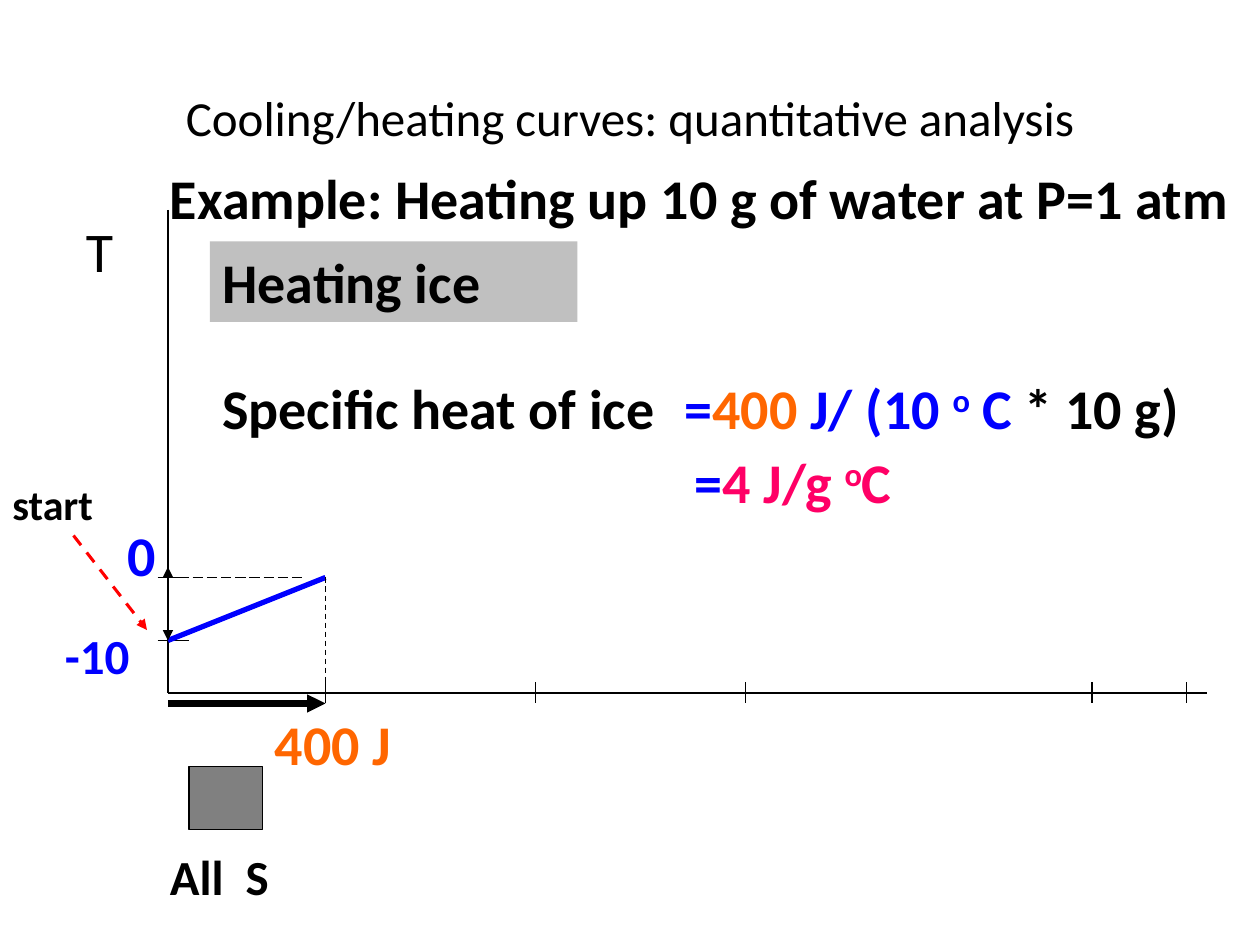
from lxml.etree import SubElement
from pptx import Presentation
from pptx.dml.color import RGBColor
from pptx.enum.dml import MSO_LINE_DASH_STYLE as Dash
from pptx.enum.shapes import MSO_CONNECTOR as Connector, MSO_SHAPE as Shape
from pptx.enum.text import MSO_ANCHOR as Anchor, MSO_AUTO_SIZE as AutoSize, PP_ALIGN as Align
from pptx.oxml.ns import qn
from pptx.util import Pt

BLACK, BLUE, ORANGE, PINK, RED = "000000", "0000FF", "FF6600", "FF0066", "FF0000"
GREY, SILVER = "808080", "C0C0C0"

AXIS_X, AXIS_Y = 96, 396
AXIS_TOP, AXIS_RIGHT = 120, 690
ICE_END, ZERO_Y, START_Y = 186, 330, 366
TICK = 6
HEAT_TICKS = (ICE_END, 306, 426, 624, 678)


def set_color(target, color):
    target.rgb = RGBColor.from_string(color)


def set_format(target, values):
    for name, value in values.items():
        setattr(target, name, value)


def add_run(paragraph, text, color, size, bold=True, baseline=None):
    run = paragraph.add_run()
    run.text = text
    set_format(run.font, {"name": "Calibri", "size": Pt(size), "bold": bold})
    set_color(run.font.color, color)
    if baseline:
        run.font._element.set("baseline", str(baseline * 1000))


def fill_text(shape, pieces, size, bold=True, wrap=True):
    set_format(shape.text_frame, {
        "word_wrap": wrap,
        "auto_size": AutoSize.SHAPE_TO_FIT_TEXT,
        "vertical_anchor": Anchor.TOP,
    })
    paragraph = shape.text_frame.paragraphs[0]
    paragraph.alignment = Align.LEFT
    for text, color, *baseline in pieces:
        add_run(paragraph, text, color, size, bold, *baseline)


def add_label(slide, box, pieces, size=32, bold=True, wrap=True):
    shape = slide.shapes.add_textbox(*map(Pt, box))
    fill_text(shape, pieces, size, bold, wrap)


def add_box(slide, box, fill, outline=None):
    shape = slide.shapes.add_shape(Shape.RECTANGLE, *map(Pt, box))
    shape.shadow.inherit = False
    shape.fill.solid()
    set_color(shape.fill.fore_color, fill)
    if outline:
        set_color(shape.line.color, outline)
        shape.line.width = Pt(0.75)
    else:
        shape.line.fill.background()
    return shape


def add_line(slide, start, end, color=BLACK, width=0.75, dash=None, arrows=()):
    line = slide.shapes.add_connector(Connector.STRAIGHT, *map(Pt, (*start, *end)))
    set_color(line.line.color, color)
    set_format(line.line, {"width": Pt(width), "dash_style": dash})
    outline = line.line._get_or_add_ln()
    for arrow in arrows:
        SubElement(outline, qn(f"a:{arrow}"), type="triangle")
    SubElement(line._element.spPr, qn("a:effectLst"))


def add_title(slide, text):
    title = slide.shapes.title
    set_format(title, {"left": Pt(36), "top": Pt(21.6), "width": Pt(648), "height": Pt(90)})
    title.text_frame.vertical_anchor = Anchor.MIDDLE
    paragraph = title.text_frame.paragraphs[0]
    paragraph.alignment = Align.CENTER
    add_run(paragraph, text, BLACK, 28, bold=False)


def add_axes(slide):
    add_line(slide, (AXIS_X, AXIS_TOP), (AXIS_X, AXIS_Y))
    add_line(slide, (AXIS_X, AXIS_Y), (AXIS_RIGHT, AXIS_Y))
    for x in HEAT_TICKS:
        add_line(slide, (x, AXIS_Y - TICK), (x, AXIS_Y + TICK))
    for y, right in ((ZERO_Y, 102), (START_Y, 108)):
        add_line(slide, (AXIS_X - TICK, y), (right, y))


def add_heating_curve(slide):
    add_line(slide, (AXIS_X, START_Y), (ICE_END, ZERO_Y), BLUE, 3)
    add_line(slide, (ICE_END, ZERO_Y), (ICE_END, AXIS_Y), dash=Dash.DASH)
    add_line(slide, (102, ZERO_Y), (174, ZERO_Y), dash=Dash.LONG_DASH)
    add_line(slide, (AXIS_X, 324), (AXIS_X, START_Y), arrows=("headEnd", "tailEnd"))
    add_line(slide, (AXIS_X, AXIS_Y + TICK), (ICE_END, AXIS_Y + TICK),
             width=3.5, arrows=("tailEnd",))
    add_line(slide, (42, 306), (84, 360), RED, 1.75, Dash.DASH, ("tailEnd",))


def add_labels(slide):
    add_label(slide, (90, 90, 642, 46), [("Example: Heating up 10 g of water at P=1 atm", BLACK)])
    add_label(slide, (42, 120, 48, 46), [("T", BLACK)], bold=False)
    add_label(slide, (0, 270, 66, 36), [("start", BLACK)], 24)
    add_label(slide, (66, 294, 24, 46), [("0", BLUE)])
    add_label(slide, (30, 354, 66, 41), [("-10", BLUE)], 28)
    add_label(slide, (150, 402, 144, 46), [("400 J", ORANGE)])
    add_label(slide, (90, 480, 90, 41), [("All  S", BLACK)], 28)


def add_calculation(slide):
    heading = add_box(slide, (120, 138, 210, 46), SILVER)
    fill_text(heading, [("Heating ice", BLACK)], 32)
    add_label(slide, (120, 210, 438, 46), [("Specific heat of ice", BLACK)])
    add_label(slide, (384, 210, 312, 46), [
        ("=", BLUE), ("400", ORANGE), (" J/ (10 ", BLUE),
        ("o", BLUE, 30), (" C ", BLUE), ("* 10 g)", BLACK),
    ])
    add_label(slide, (390, 252, 130, 46), [
        ("=", BLUE), ("4 J/g ", PINK), ("o", PINK, 30), ("C", PINK),
    ], wrap=False)


def main():
    presentation = Presentation()
    set_format(presentation, {"slide_width": Pt(720), "slide_height": Pt(540)})
    slide = presentation.slides.add_slide(presentation.slide_layouts[5])
    add_title(slide, "Cooling/heating curves: quantitative analysis")
    add_axes(slide)
    add_heating_curve(slide)
    add_box(slide, (108, 438, 42, 36), GREY, BLACK)
    add_labels(slide)
    add_calculation(slide)
    presentation.save("out.pptx")


if __name__ == "__main__":
    main()
